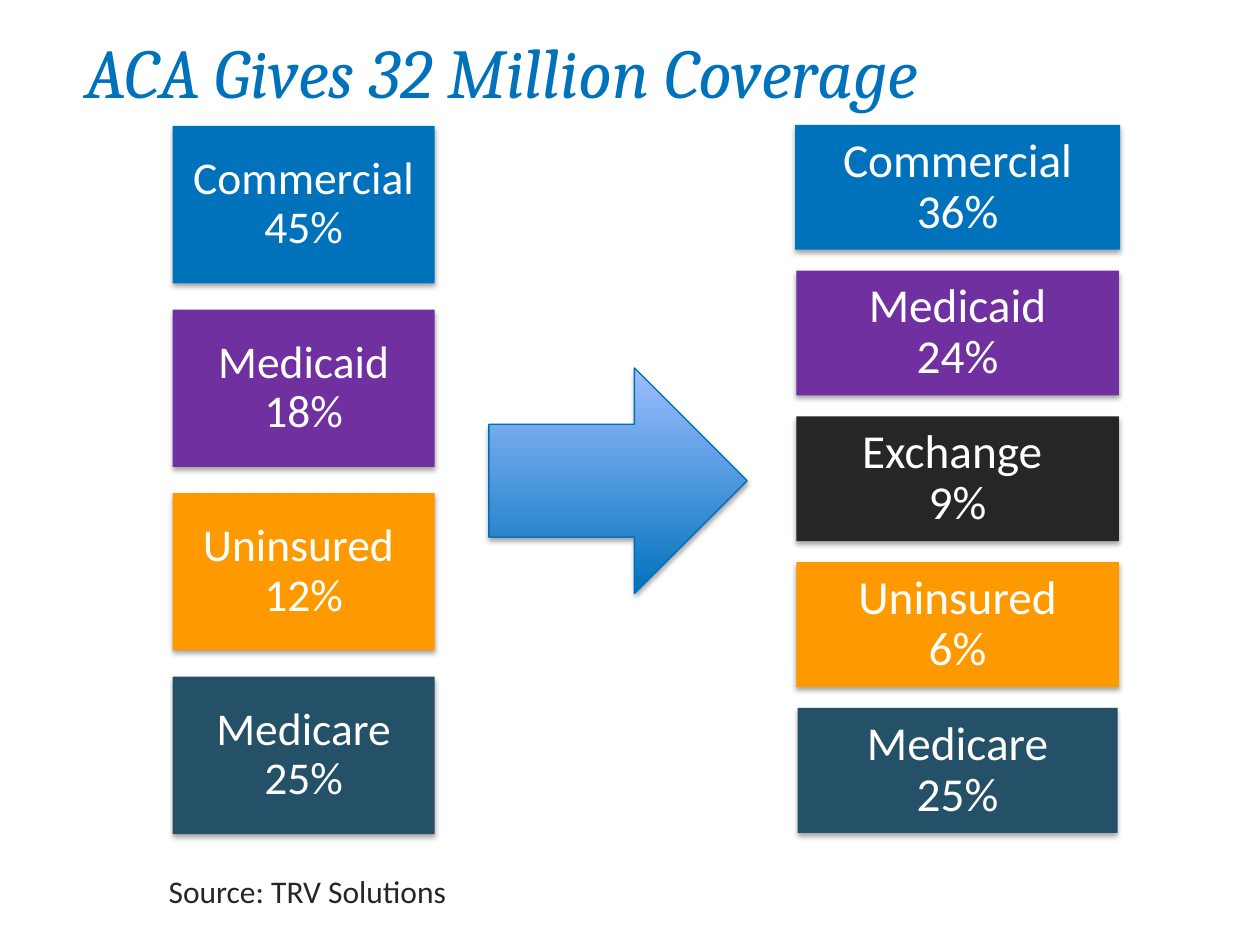
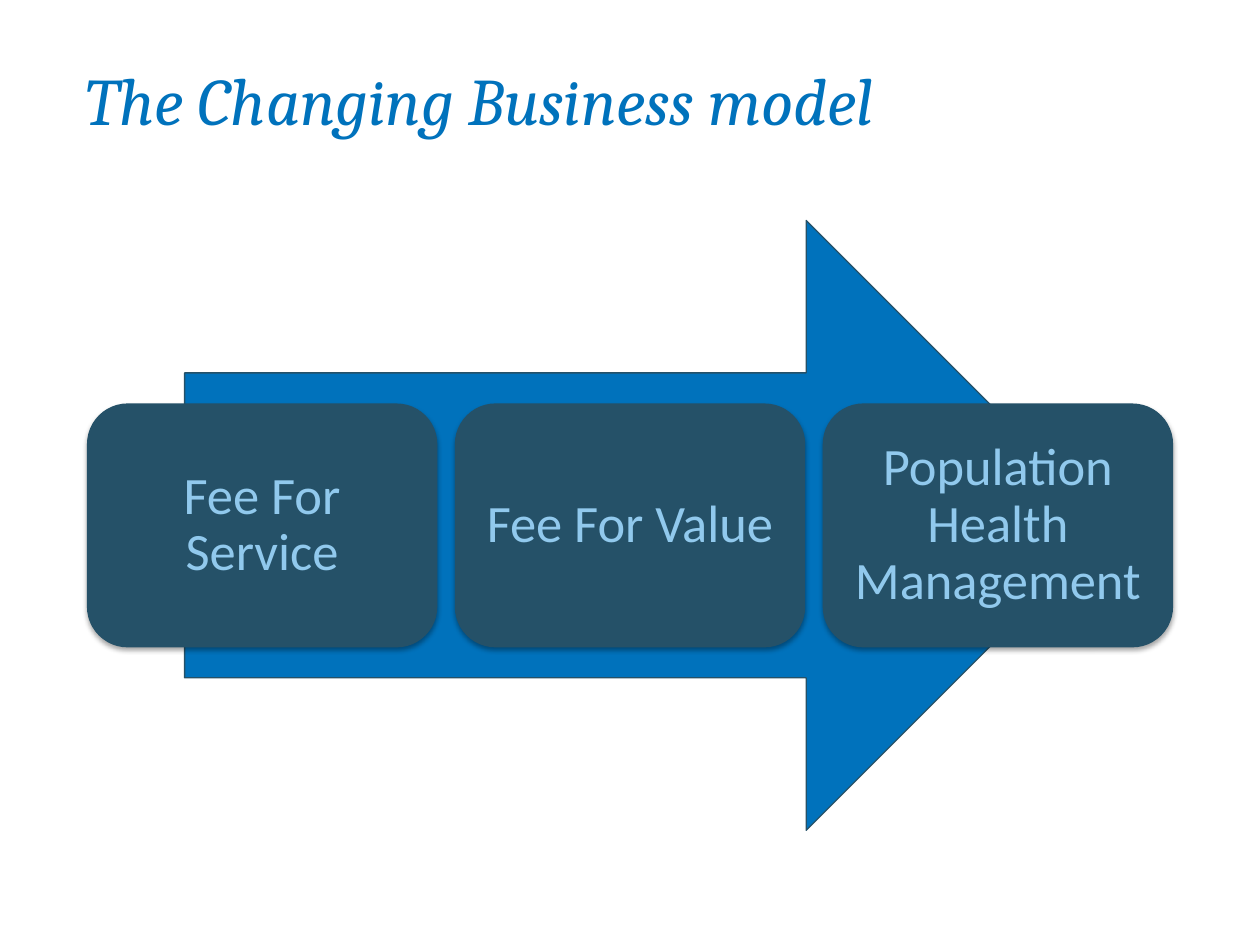
import lxml.etree
import pptx
import pptx.dml.color
import pptx.enum.shapes
import pptx.enum.text
import pptx.oxml.ns
import pptx.util

SHAPES = pptx.enum.shapes.MSO_SHAPE
ANCHORS = pptx.enum.text.MSO_ANCHOR
ALIGNS = pptx.enum.text.PP_ALIGN
Inches = pptx.util.Inches

SLIDE_W, SLIDE_H = 10, 7.5
TITLE_BOX = (0.68, 0.3, 8.64)
TITLE_FONT, BODY_FONT = "Cambria", "Calibri"
BLUE, PURPLE, ORANGE, TEAL = "0072BC", "7030A0", "FF9900", "255168"
DARK, WHITE, PALE_BLUE = "262626", "FFFFFF", "91C9ED"
SKY, ARROW_EDGE = "9EBFFF", "006FB8"

PAYER_COLOURS = {"Commercial": BLUE, "Medicaid": PURPLE, "Exchange": DARK,
                 "Uninsured": ORANGE, "Medicare": TEAL}
BEFORE_ACA = ["Commercial\n45%", "Medicaid\n18%", "Uninsured \n12%", "Medicare\n25%"]
AFTER_ACA = ["Commercial\n36%", "Medicaid\n24%", "Exchange \n9%", "Uninsured\n6%",
             "Medicare\n25%"]
BUSINESS_MODELS = ["Fee For Service", "Fee For Value", "Population Health Management"]


def colour(hex_string):
    return pptx.dml.color.RGBColor.from_string(hex_string)


def write(frame, text, size, hex_colour, font=BODY_FONT, margin=0.0, italic=False,
          align=ALIGNS.LEFT, anchor=ANCHORS.TOP, spacing=1.0):
    frame.text = text
    frame.word_wrap = True
    frame.vertical_anchor = anchor
    frame.margin_left = frame.margin_right = Inches(margin)
    frame.margin_top = frame.margin_bottom = Inches(margin)
    for paragraph in frame.paragraphs:
        paragraph.alignment = align
        paragraph.line_spacing = spacing
        for run in paragraph.runs:
            run.font.name, run.font.size = font, pptx.util.Pt(size)
            run.font.italic = italic
            run.font.color.rgb = colour(hex_colour)


def add_soft_shadow(shape):
    effects = shape._element.spPr.find(pptx.oxml.ns.qn("a:effectLst"))
    shadow = lxml.etree.SubElement(
        effects, pptx.oxml.ns.qn("a:outerShdw"), blurRad=str(pptx.util.Pt(3.1)),
        dist=str(pptx.util.Pt(1.8)), dir="5400000", rotWithShape="0")
    black = lxml.etree.SubElement(shadow, pptx.oxml.ns.qn("a:srgbClr"), val="000000")
    lxml.etree.SubElement(black, pptx.oxml.ns.qn("a:alpha"), val="35000")


def add_block(slide, preset, box, fill, edge=None, shadow=True):
    block = slide.shapes.add_shape(preset, *map(Inches, box))
    block.fill.solid()
    block.fill.fore_color.rgb = colour(fill)
    if edge:
        block.line.color.rgb = colour(edge)
        block.line.width = pptx.util.Pt(0.75)
    else:
        block.line.fill.background()
    block.shadow.inherit = False
    if shadow:
        add_soft_shadow(block)
    return block


def add_title(slide, text, size, height):
    title = slide.shapes.add_textbox(*map(Inches, (*TITLE_BOX, height)))
    write(title.text_frame, text, size, BLUE, TITLE_FONT, italic=True,
          anchor=ANCHORS.BOTTOM)


def add_payer_stack(slide, box, payers, size, taper=0.0):
    """Equal blocks a sixth of their height apart; first is wider, last narrower by taper."""
    left, top, width, height = box
    block_h = height / (len(payers) + (len(payers) - 1) / 6)
    for row, payer in enumerate(payers):
        extra = taper * ((row == 0) - (row == len(payers) - 1))
        block_box = (left - extra / 2, top + row * block_h * 7 / 6, width + extra, block_h)
        fill = PAYER_COLOURS[payer.split()[0]]
        block = add_block(slide, SHAPES.RECTANGLE, block_box, fill)
        write(block.text_frame, payer, size, WHITE, margin=0.11, align=ALIGNS.CENTER,
              anchor=ANCHORS.MIDDLE, spacing=0.9)


def add_gradient_arrow(slide, box):
    arrow = add_block(slide, SHAPES.RIGHT_ARROW, box, BLUE, ARROW_EDGE)
    arrow.fill.gradient()
    arrow.fill.gradient_angle = 90
    for stop, stop_colour in zip(arrow.fill.gradient_stops, (BLUE, SKY)):
        stop.color.rgb = colour(stop_colour)


def add_source(slide, box, text):
    source = slide.shapes.add_textbox(*map(Inches, box))
    write(source.text_frame, text, 18, DARK)
    source.text_frame.margin_left = source.text_frame.margin_right = Inches(0.1)
    source.text_frame.margin_top = source.text_frame.margin_bottom = Inches(0.05)


def add_model_process(slide, box, models):
    """Arrow behind a row of cards that fills the middle 40% of the box height."""
    left, top, width, height = box
    arrow_box = (left + 0.09 * width, top, 0.853 * width, height)
    add_block(slide, SHAPES.RIGHT_ARROW, arrow_box, BLUE, TEAL, shadow=False)
    card_w = width / (len(models) + (len(models) - 1) / 20)
    for column, model in enumerate(models):
        card_box = (left + column * card_w * 1.05, top + 0.3 * height, card_w, 0.4 * height)
        card = add_block(slide, SHAPES.ROUNDED_RECTANGLE, card_box, TEAL)
        write(card.text_frame, model, 30, PALE_BLUE, margin=0.12, align=ALIGNS.CENTER,
              anchor=ANCHORS.MIDDLE, spacing=0.9)


def build_coverage_slide(slide):
    add_payer_stack(slide, (1.37, 1, 2.08, 5.62), BEFORE_ACA, 26)
    add_title(slide, "ACA Gives 32 Million Coverage", 40, 0.59)
    add_payer_stack(slide, (6.32, 0.99, 2.56, 5.62), AFTER_ACA, 27, taper=0.02)
    add_gradient_arrow(slide, (3.88, 2.92, 2.05, 1.79))
    add_source(slide, (1.24, 6.87, 2.9, 0.42), "Source: TRV Solutions")


def build_model_slide(slide):
    add_model_process(slide, (0.69, 1.75, 8.62, 4.84), BUSINESS_MODELS)
    add_title(slide, "The Changing Business model", 38, 0.8)


def main():
    deck = pptx.Presentation()
    deck.slide_width, deck.slide_height = Inches(SLIDE_W), Inches(SLIDE_H)
    for build in (build_coverage_slide, build_model_slide):
        build(deck.slides.add_slide(deck.slide_layouts[6]))
    deck.save("out.pptx")


if __name__ == "__main__":
    main()
